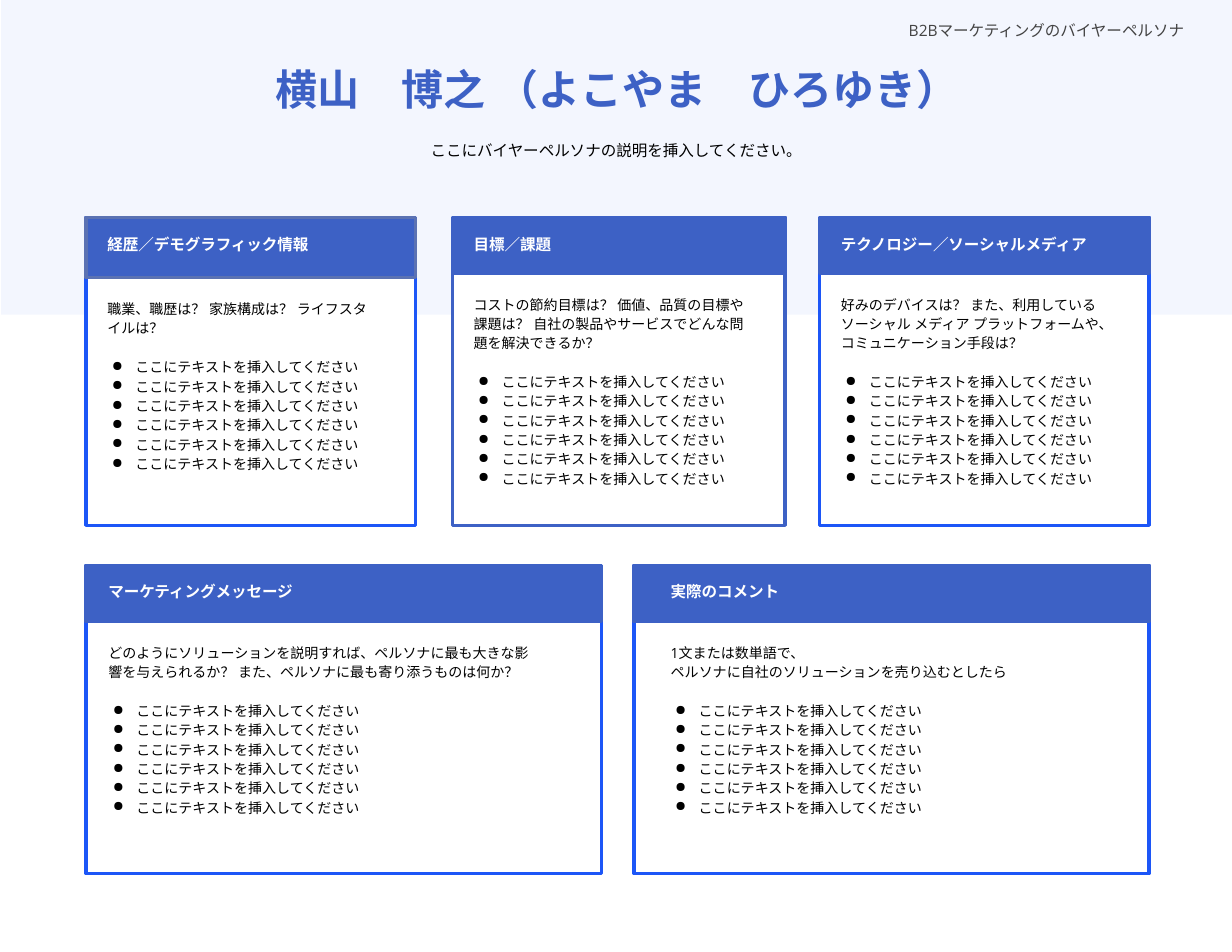
from copy import deepcopy
from lxml.etree import SubElement
from pptx import Presentation
from pptx.dml.color import RGBColor
from pptx.enum.shapes import MSO_SHAPE
from pptx.enum.text import MSO_ANCHOR, MSO_AUTO_SIZE, PP_ALIGN
from pptx.oxml.ns import qn
from pptx.util import Pt

FONT = "Open Sans"
BLUE, BRIGHT, SLATE = "3D61C5", "1C56F7", "5B72B3"
WHITE, BLACK, GREY = "FFFFFF", "000000", "434343"
ITEM = "ここにテキストを挿入してください"
WIDE, HIGH = 792, 612
TOP, LOW, TALL = 139.7, 363.6, 198


def paint(color, code):
    color.rgb = RGBColor.from_string(code)


def add_rect(slide, box, fill, line=None):
    rect = slide.shapes.add_shape(MSO_SHAPE.RECTANGLE, *map(Pt, box))
    rect.shadow.inherit = False
    rect.fill.solid()
    paint(rect.fill.fore_color, fill)
    if line:
        paint(rect.line.color, line)
        rect.line.width = Pt(2.25)
    else:
        rect.line.fill.background()
    return rect


def add_text(slide, box, lines, size, color, bold=False,
             align=PP_ALIGN.LEFT, space=None, inset=7.2, grow=True):
    frame = slide.shapes.add_textbox(*map(Pt, box)).text_frame
    frame.word_wrap = True
    frame.vertical_anchor = MSO_ANCHOR.TOP
    if grow:
        frame.auto_size = MSO_AUTO_SIZE.SHAPE_TO_FIT_TEXT
    frame.margin_left = frame.margin_right = Pt(inset)
    frame.margin_top = frame.margin_bottom = Pt(inset)
    frame.text = "\n".join(lines)
    for para in frame.paragraphs:
        para.alignment = align
        para.line_spacing = space
        for run in para.runs:
            run.font.size, run.font.bold, run.font.name = Pt(size), bold, FONT
            paint(run.font.color, color)
            props = run.font._element
            SubElement(props, qn("a:ea")).set("typeface", FONT)
            SubElement(props, qn("a:cs")).set("typeface", FONT)
        # Line breaks take the size of the text around them
        for gap in para._p.findall(qn("a:br")):
            gap.append(deepcopy(para.runs[0].font._element))
    return frame


def add_bullet(para):
    props = para._p.get_or_add_pPr()
    props.set("marL", str(Pt(18)))
    props.set("indent", str(Pt(-15.1)))
    tint = SubElement(SubElement(props, qn("a:buClr")), qn("a:srgbClr"))
    tint.set("val", BLACK)
    SubElement(props, qn("a:buChar")).set("char", "●")


def add_header(slide, box):
    left, top, width, height = box
    # Pale band
    band = add_rect(slide, (left + 0.7, top, width, height), BRIGHT)
    tint = band.fill._xPr.find(qn("a:solidFill"))[0]
    SubElement(tint, qn("a:alpha")).set("val", "5000")
    # Topic, name and summary
    add_text(slide, (left + 549.4, top + 5, 220.3, 37.4),
             ["B2Bマーケティングのバイヤーペルソナ"], 10, GREY,
             align=PP_ALIGN.RIGHT, space=1.15, inset=8.64, grow=False)
    add_text(slide, (left + 0.7, top + 33.8, width, 47.5),
             ["横山　博之 （よこやま　ひろゆき）"], 27, BLUE, True, PP_ALIGN.CENTER)
    add_text(slide, (left, top + 82, width, 26.6),
             ["ここにバイヤーペルソナの説明を挿入してください。"], 10, BLACK,
             align=PP_ALIGN.CENTER, space=1.15)


def add_card(slide, box, title, intro, wide, body, pad=6.5, drop=5, bar=36,
             tall=26.6, edge=BRIGHT, trim=BLUE):
    """wide is the title's width, body the size of the text below it."""
    left, top, width, height = box
    add_rect(slide, box, WHITE, edge)
    # Title bar
    add_rect(slide, (left, top, width, bar), BLUE, trim)
    add_text(slide, (left + pad, top + drop, wide, tall), [title], 10, WHITE, True)
    # Question and answers
    frame = add_text(slide, (left + pad, top + bar + 5.8, *body),
                     [intro] + [ITEM] * 6, 9, BLACK, space=1.15)
    frame.paragraphs[0].space_after = Pt(12.5)
    for para in frame.paragraphs[1:]:
        add_bullet(para)


def main():
    deck = Presentation()
    deck.slide_width, deck.slide_height = Pt(WIDE), Pt(HIGH)
    slide = deck.slides.add_slide(deck.slide_layouts[6])
    add_header(slide, (0, 0, WIDE, 202.3))

    # Upper row
    add_card(slide, (55.4, TOP, 211.7, TALL), "経歴／デモグラフィック情報",
             "職業、職歴は？ 家族構成は？ ライフスタイルは？",
             205.2, (187.9, 151.2), bar=38.9, trim=SLATE)
    add_card(slide, (290.9, TOP, 213.8, TALL), "目標／課題",
             "コストの節約目標は？ 価値、品質の目標や課題は？ "
             "自社の製品やサービスでどんな問題を解決できるか？",
             187.9, (187.9, 163.4), edge=BLUE)
    add_card(slide, (527, TOP, 211.7, TALL), "テクノロジー／ソーシャルメディア",
             "好みのデバイスは？ また、利用しているソーシャル メディア "
             "プラットフォームや、コミュニケーション手段は？",
             187.9, (187.9, 163.4), tall=38.9)

    # Lower row
    add_card(slide, (55.4, LOW, 331.2, TALL), "マーケティングメッセージ",
             "どのようにソリューションを説明すれば、ペルソナに最も大きな影響を"
             "与えられるか？ また、ペルソナに最も寄り添うものは何か？",
             249.1, (288.7, 138.2), pad=7.2, drop=4.3)
    add_card(slide, (407.5, LOW, 331.2, TALL), "実際のコメント",
             "1文または数単語で、\vペルソナに自社のソリューションを売り込むとしたら",
             249.1, (296.6, 138.2), pad=16.6, drop=4.3)

    deck.save("out.pptx")


if __name__ == "__main__":
    main()
